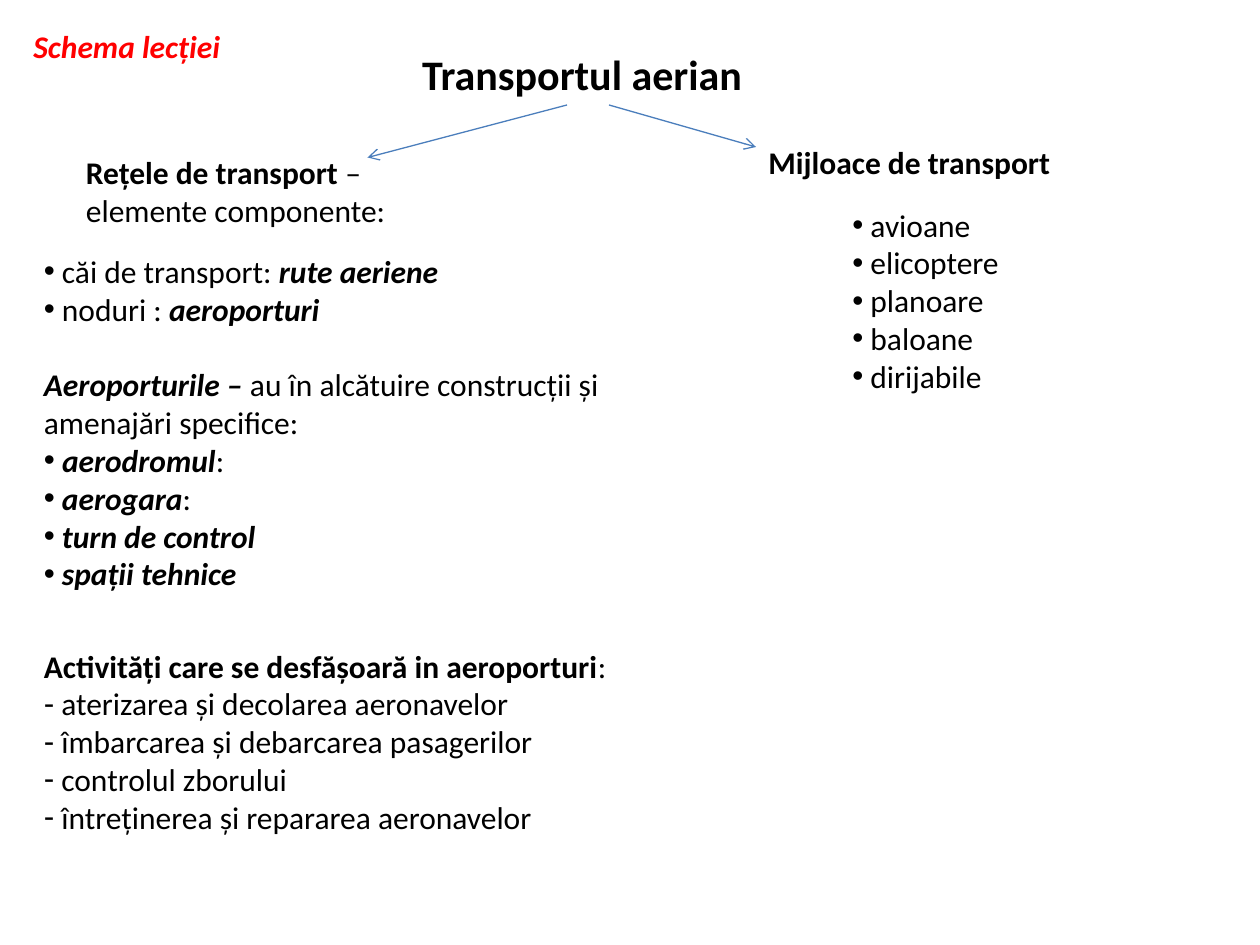
from lxml import etree
from pptx import Presentation
from pptx import util as u
from pptx.dml.color import RGBColor
from pptx.enum import shapes, text
from pptx.oxml.ns import qn

COLORS = {"heading": "FF0000", "body": "000000", "arrow": "4B7EBC"}

prs = Presentation()
prs.slide_width, prs.slide_height = u.Inches(10), u.Inches(7.5)
s = prs.slides.add_slide(prs.slide_layouts[5])
CELL = prs.slide_width / 120  # grid of 120 columns by 90 rows


def grid(*cells):
    return [u.Emu(round(c * CELL)) for c in cells]


def write(sp, paragraphs, size=18, color="body"):
    """Each paragraph is (bullet, space before, runs); each run is (text, style letters b and i)."""
    tf = sp.text_frame
    tf.word_wrap = True
    tf.vertical_anchor = text.MSO_ANCHOR.TOP
    tf.auto_size = text.MSO_AUTO_SIZE.SHAPE_TO_FIT_TEXT
    for n, (bullet, before, runs) in enumerate(paragraphs):
        p = tf.add_paragraph() if n else tf.paragraphs[0]
        p.alignment = text.PP_ALIGN.LEFT
        p.space_before = u.Pt(before)
        if bullet:
            pPr = p._p.get_or_add_pPr()
            etree.SubElement(pPr, qn("a:buFont"), typeface="Arial")
            etree.SubElement(pPr, qn("a:buChar"), char=bullet)
        for words, style in runs:
            r = p.add_run()
            r.text = words
            r.font.name, r.font.size = "Calibri", u.Pt(size)
            r.font.bold, r.font.italic = "b" in style, "i" in style
            r.font.color.rgb = RGBColor.from_string(COLORS[color])


# Title
title = s.shapes.title
title.left, title.top, title.width, title.height = grid(39, 4, 38, 6)
write(title, [("", 0, [("Transportul aerian", "b")])], size=24)

# Text blocks: left, top, width, height in grid cells, colour, paragraphs
vehicles = ["avioane", "elicoptere", "planoare", "baloane", "dirijabile"]
activities = ["aterizarea și decolarea aeronavelor", "îmbarcarea și debarcarea pasagerilor",
              "controlul zborului", "întreținerea și repararea aeronavelor"]
blocks = [
    ((2, 2, 43, 4.8), "heading", [("", 0, [("Schema lecției", "bi")])]),
    ((7, 14, 38, 8.5), "body",
     [("", 0, [("Rețele de transport", "b"), (" – elemente componente:", "")])]),
    ((72, 13, 44, 4.8), "body", [("", 0, [("Mijloace de transport", "b")])]),
    ((3, 23.4, 64, 34), "body", [
        ("•", 0, [(" căi de transport: ", ""), ("rute aeriene", "bi")]),
        ("•", 0, [(" noduri : ", ""), ("aeroporturi", "bi")]),
        ("", 21.6, [("Aeroporturile – ", "bi"),
                    ("au în alcătuire construcții și amenajări specifice:", "")]),
        ("•", 0, [(" ", ""), ("aerodromul", "bi"), (":", "")]),
        ("•", 0, [(" aerogara", "bi"), (":", "")]),
        ("•", 0, [(" turn de control", "bi")]),
        ("•", 0, [(" spații tehnice", "bi")])]),
    ((80, 19, 28, 19.4), "body", [("•", 0, [(" " + v, "")]) for v in vehicles]),
    ((3, 61, 65, 26.6), "body",
     [("", 0, [("Activități care se desfășoară in aeroporturi", "b"), (":", "")])]
     + [("-", 0, [(" " + a, "")]) for a in activities]),
]
for box, color, paragraphs in blocks:
    write(s.shapes.add_textbox(*grid(*box)), paragraphs, color=color)

# Arrows from the title to the two branches
for ends in [(54, 10, 35, 15), (58, 10, 72, 14)]:
    arrow = s.shapes.add_connector(shapes.MSO_CONNECTOR.STRAIGHT, *grid(*ends))
    if ends[0] == 58:
        arrow.begin_connect(title, 2)
    arrow.line.color.rgb = RGBColor.from_string(COLORS["arrow"])
    arrow.line.width = u.Pt(0.75)
    etree.SubElement(arrow.line._get_or_add_ln(), qn("a:tailEnd"), type="arrow")
    etree.SubElement(arrow._element.spPr, qn("a:effectLst"))

prs.save("out.pptx")
